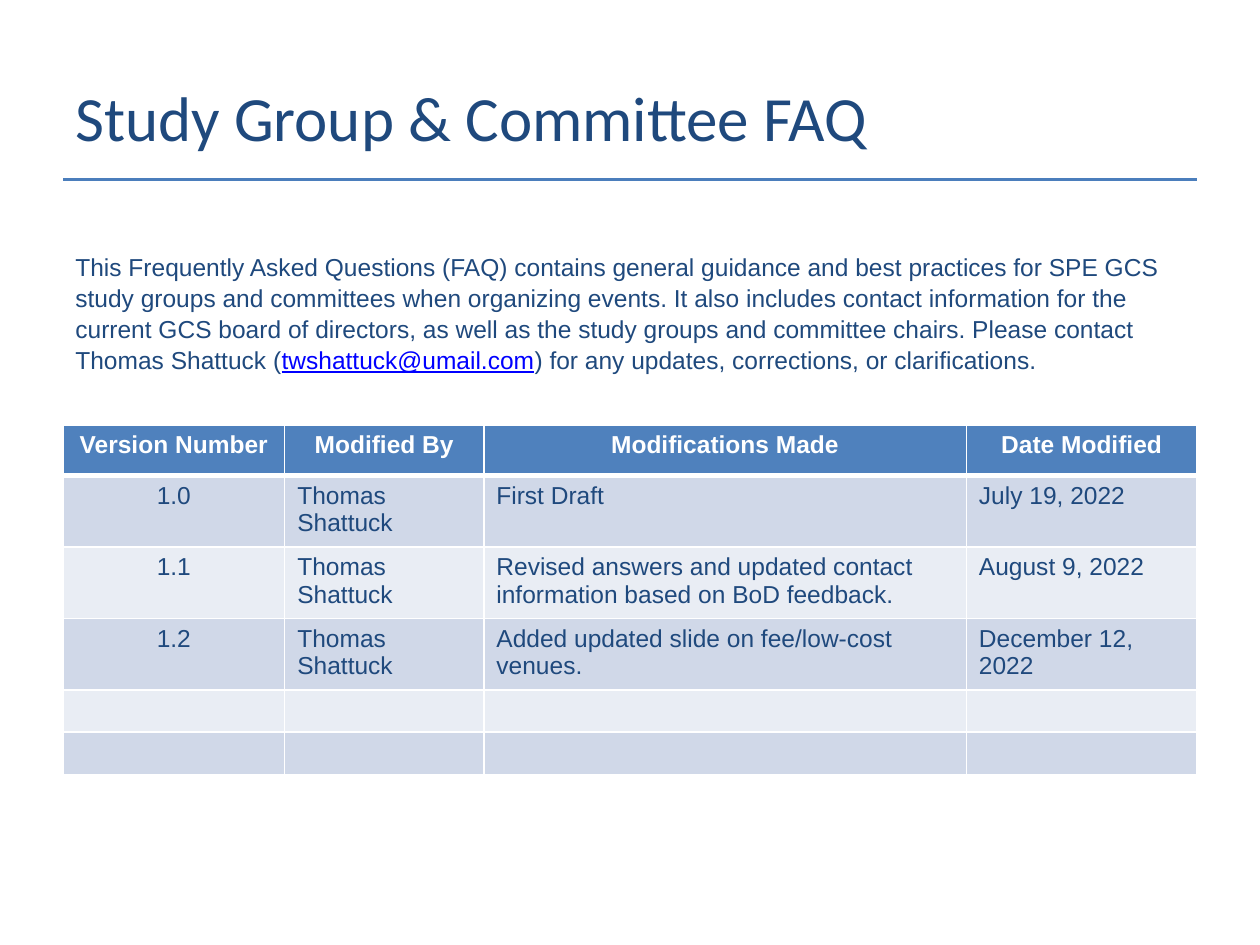
"""Build the Study Group & Committee FAQ slide with its version history."""
from dataclasses import dataclass

from lxml import etree
from pptx import Presentation
from pptx.dml.color import RGBColor
from pptx.enum.shapes import MSO_CONNECTOR
from pptx.enum.text import MSO_ANCHOR, PP_ALIGN
from pptx.oxml.ns import qn
from pptx.slide import Slide
from pptx.table import _Cell
from pptx.util import Inches, Pt

STRAIGHT = MSO_CONNECTOR.STRAIGHT
TOP, MIDDLE = MSO_ANCHOR.TOP, MSO_ANCHOR.MIDDLE
LEFT, CENTER = PP_ALIGN.LEFT, PP_ALIGN.CENTER

NAVY = RGBColor(0x1F, 0x49, 0x7D)
RULE_BLUE = RGBColor(0x4B, 0x7E, 0xBC)
HEADER_BLUE = RGBColor(0x4F, 0x81, 0xBD)
LINK_BLUE = RGBColor(0x00, 0x00, 0xFF)
WHITE = RGBColor(0xFF, 0xFF, 0xFF)
BANDS = (RGBColor(0xD0, 0xD8, 0xE8), RGBColor(0xE9, 0xED, 0xF4))

SLIDE_WIDTH, SLIDE_HEIGHT = 10, 7.5
MARGIN = 0.05 * SLIDE_WIDTH
CONTENT_WIDTH = SLIDE_WIDTH - 2 * MARGIN
BODY_SIZE = 14
COLUMN_WIDTHS = (1.76, 1.58, 3.83, 1.83)
HEADER_HEIGHT, ENTRY_HEIGHT, EMPTY_HEIGHT = 0.4, 0.54, 0.33
EMPTY_ROWS = 2

HEADINGS = ("Version Number", "Modified By", "Modifications Made", "Date Modified")


@dataclass(frozen=True)
class Version:
    """One entry of the version history."""
    number: str
    author: str
    change: str
    date: str


@dataclass(frozen=True)
class Span:
    """A stretch of text with its own look."""
    text: str
    color: RGBColor = NAVY
    underline: bool = False


@dataclass(frozen=True)
class TextBlock:
    """A full-width text box, placed by top and height in inches."""
    spans: tuple[Span, ...]
    top: float
    height: float
    font: str
    size: int
    anchor: MSO_ANCHOR = TOP
    line_spacing: float = 1.0


VERSIONS = (
    Version("1.0", "Thomas Shattuck", "First Draft", "July 19, 2022"),
    Version("1.1", "Thomas Shattuck",
            "Revised answers and updated contact information based on BoD feedback.",
            "August 9, 2022"),
    Version("1.2", "Thomas Shattuck", "Added updated slide on fee/low-cost venues.",
            "December 12, 2022"),
)

TITLE = TextBlock((Span("Study Group & Committee FAQ"),), 0.04 * SLIDE_HEIGHT, 1.25,
                  "Calibri", 36, MIDDLE)
INTRODUCTION = TextBlock((
    Span("This Frequently Asked Questions (FAQ) contains general guidance and best "
         "practices for SPE GCS study groups and committees when organizing events. "
         "It also includes contact information for the current GCS board of directors, "
         "as well as the study groups and committee chairs. Please contact "
         "Thomas Shattuck ("),
    Span("twshattuck@umail.com", LINK_BLUE, True),
    Span(") for any updates, corrections, or clarifications."),
), 1.94, 1.04, "Arial", BODY_SIZE, line_spacing=1.05)


def add_text_block(slide: Slide, block: TextBlock) -> None:
    """Add a wrapped text box made of formatted spans."""
    shape = slide.shapes.add_textbox(Inches(MARGIN), Inches(block.top),
                                     Inches(CONTENT_WIDTH), Inches(block.height))
    text_frame = shape.text_frame
    text_frame.word_wrap = True
    text_frame.vertical_anchor = block.anchor
    paragraph = text_frame.paragraphs[0]
    paragraph.line_spacing = block.line_spacing
    for span in block.spans:
        run = paragraph.add_run()
        run.text = span.text
        run.font.name = block.font
        run.font.size = Pt(block.size)
        run.font.color.rgb = span.color
        run.font.underline = span.underline


def add_title_rule(slide: Slide) -> None:
    """Add the line below the title."""
    top = Inches(0.19 * SLIDE_HEIGHT)
    rule = slide.shapes.add_connector(STRAIGHT, Inches(MARGIN), top,
                                      Inches(MARGIN + CONTENT_WIDTH), top)
    rule.line.color.rgb = RULE_BLUE
    rule.line.width = Pt(1.75)
    etree.SubElement(rule._element.spPr, qn("a:effectLst"))


def add_borders(cell: _Cell, bottom_width: float) -> None:
    """Give a cell white borders."""
    properties = cell._tc.get_or_add_tcPr()
    widths = {"a:lnL": 1, "a:lnR": 1, "a:lnT": 1, "a:lnB": bottom_width}
    for tag, width in widths.items():
        border = etree.SubElement(properties, qn(tag), w=str(Pt(width)))
        fill = etree.SubElement(border, qn("a:solidFill"))
        etree.SubElement(fill, qn("a:srgbClr"), val=str(WHITE))


def fill_cell(cell: _Cell, text: str, fill: RGBColor, alignment: PP_ALIGN,
              is_header: bool) -> None:
    """Set the text, fill and borders of a table cell."""
    add_borders(cell, 3 if is_header else 1)
    cell.fill.solid()
    cell.fill.fore_color.rgb = fill
    paragraph = cell.text_frame.paragraphs[0]
    paragraph.text = text
    paragraph.alignment = alignment
    for run in paragraph.runs:
        run.font.name = "Arial"
        run.font.size = Pt(BODY_SIZE)
        run.font.bold = is_header
        run.font.color.rgb = WHITE if is_header else NAVY
    if not text:
        etree.SubElement(paragraph._p, qn("a:endParaRPr"), sz=str(BODY_SIZE * 100))


def add_version_table(slide: Slide) -> None:
    """Add the version history with spare rows at the end."""
    entries = [(entry.number, entry.author, entry.change, entry.date)
               for entry in VERSIONS]
    rows = [HEADINGS, *entries, *[("",) * len(HEADINGS)] * EMPTY_ROWS]
    heights = [HEADER_HEIGHT, *[ENTRY_HEIGHT] * len(entries),
               *[EMPTY_HEIGHT] * EMPTY_ROWS]
    table = slide.shapes.add_table(len(rows), len(HEADINGS), Inches(MARGIN),
                                   Inches(0.45 * SLIDE_HEIGHT), Inches(CONTENT_WIDTH),
                                   Inches(sum(heights))).table
    for column, width in zip(table.columns, COLUMN_WIDTHS):
        column.width = Inches(width)
    for row_index, (texts, height) in enumerate(zip(rows, heights)):
        table.rows[row_index].height = Inches(height)
        is_header = row_index == 0
        fill = HEADER_BLUE if is_header else BANDS[(row_index - 1) % len(BANDS)]
        for column_index, text in enumerate(texts):
            alignment = CENTER if is_header or column_index == 0 else LEFT
            fill_cell(table.cell(row_index, column_index), text, fill, alignment,
                      is_header)


def main() -> None:
    """Build and save the presentation."""
    presentation = Presentation()
    presentation.slide_width = Inches(SLIDE_WIDTH)
    presentation.slide_height = Inches(SLIDE_HEIGHT)
    slide = presentation.slides.add_slide(presentation.slide_layouts[6])
    add_title_rule(slide)
    add_text_block(slide, TITLE)
    add_version_table(slide)
    add_text_block(slide, INTRODUCTION)
    presentation.save("out.pptx")


if __name__ == "__main__":
    main()
